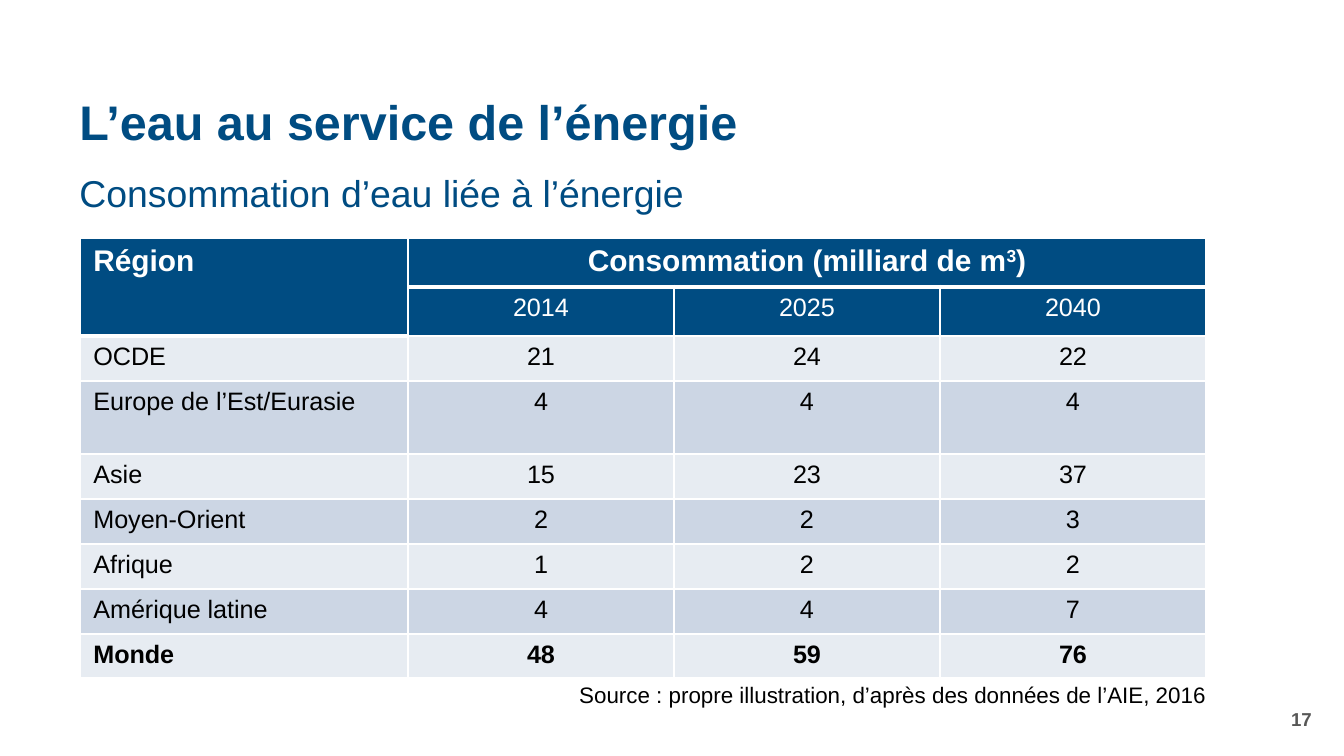
from lxml import etree
from pptx import Presentation
from pptx.dml.color import RGBColor
from pptx.enum.text import MSO_ANCHOR, MSO_AUTO_SIZE, PP_ALIGN
from pptx.oxml.ns import qn
from pptx.util import Pt

LEFT, MID, RIGHT = PP_ALIGN.LEFT, PP_ALIGN.CENTER, PP_ALIGN.RIGHT
TOP, CENTER = MSO_ANCHOR.TOP, MSO_ANCHOR.MIDDLE
FIXED = MSO_AUTO_SIZE.NONE
PX = 914400 / 134.4
HUES = {"blue": "004C82", "white": "FFFFFF", "black": "000000",
        "grey": "575756", "pale": "E7ECF2", "dim": "CCD6E4"}


def px(*nums):
    return [round(n * PX) for n in nums]


def style(para, size, hue, bold=False, align=LEFT):
    para.alignment = align
    font = para.font
    font.name, font.size, font.bold = "Arial", Pt(size), bold
    font.color.rgb = RGBColor.from_string(HUES[hue])


prs = Presentation()
prs.slide_width, prs.slide_height = px(1344, 756)
slide = prs.slides.add_slide(prs.slide_layouts[1])

title, body = slide.placeholders
num = slide.shapes.add_textbox(*px(1023, 699, 302, 40))
note = slide.shapes.add_textbox(*px(566, 675, 699, 40))
for box, text, size, hue, bold, align, anchor in [
    (title, "L’eau au service de l’énergie", 26, "blue", True, LEFT, CENTER),
    (body, "Consommation d’eau liée à l’énergie", 20, "blue", False, LEFT, TOP),
    (num, "17", 10, "grey", True, RIGHT, CENTER),
    (note, "Source : propre illustration, d’après des données de l’AIE, 2016",
     12, "black", False, LEFT, TOP),
]:
    frame = box.text_frame
    frame.text = text
    frame.word_wrap, frame.auto_size = True, FIXED
    frame.vertical_anchor = anchor
    para = frame.paragraphs[0]
    if box is body:
        props = para._p.get_or_add_pPr()
        props.set("marL", "0")
        props.set("indent", "0")
        etree.SubElement(props, qn("a:buNone"))
    if box in (title, body):
        para.line_spacing, para.space_before = 0.9, Pt(0)
    style(para, size, hue, bold, align)

title.left, title.top, title.width, title.height = px(66, 85, 1259, 79)
body.left, body.top, body.width, body.height = px(66, 175, 1259, 52)
frame = body.text_frame
frame.margin_top = frame.margin_bottom = 0

rows = [
    ("Région", "Consommation (milliard de m", "", ""),
    ("", "2014", "2025", "2040"),
    ("OCDE", "21", "24", "22"),
    ("Europe de l’Est/Eurasie", "4", "4", "4"),
    ("Asie", "15", "23", "37"),
    ("Moyen-Orient", "2", "2", "3"),
    ("Afrique", "1", "2", "2"),
    ("Amérique latine", "4", "4", "7"),
    ("Monde", "48", "59", "76"),
]
highs = [49, 49, 45, 73, 45, 45, 45, 45, 44]
wides = [328, 266, 266, 266]
table = slide.shapes.add_table(
    len(rows), len(wides), *px(80, 238, sum(wides), sum(highs))).table
for col, wide in zip(table.columns, px(*wides)):
    col.width = wide
for row, high in zip(table.rows, px(*highs)):
    row.height = high
table.cell(0, 0).merge(table.cell(1, 0))
table.cell(0, 1).merge(table.cell(0, 3))

for r, texts in enumerate(rows):
    head = r < 2
    fill = "blue" if head else ("pale", "dim")[r % 2]
    for c, text in enumerate(texts):
        cell = table.cell(r, c)
        thick = {"lnT": r == (1 if c else 2),
                 "lnB": r == 0 or (r == 1 and c == 0)}
        for side in ("lnL", "lnR", "lnT", "lnB"):
            width = Pt(3 if thick.get(side) else 1)
            line = etree.SubElement(
                cell._tc.get_or_add_tcPr(), qn("a:" + side), w=str(width))
            paint = etree.SubElement(line, qn("a:solidFill"))
            etree.SubElement(paint, qn("a:srgbClr"), val=HUES["white"])
        cell.fill.solid()
        cell.fill.fore_color.rgb = RGBColor.from_string(HUES[fill])
        para = cell.text_frame.paragraphs[0]
        if text:
            para.add_run().text = text
        style(para, 16 if r == 0 else 13.5, "white" if head else "black",
              r in (0, len(rows) - 1), MID if c else LEFT)

para = table.cell(0, 1).text_frame.paragraphs[0]
power = para.add_run()
power.text = "3"
power._r.get_or_add_rPr().set("baseline", "30000")
para.add_run().text = ")"

prs.save("out.pptx")
